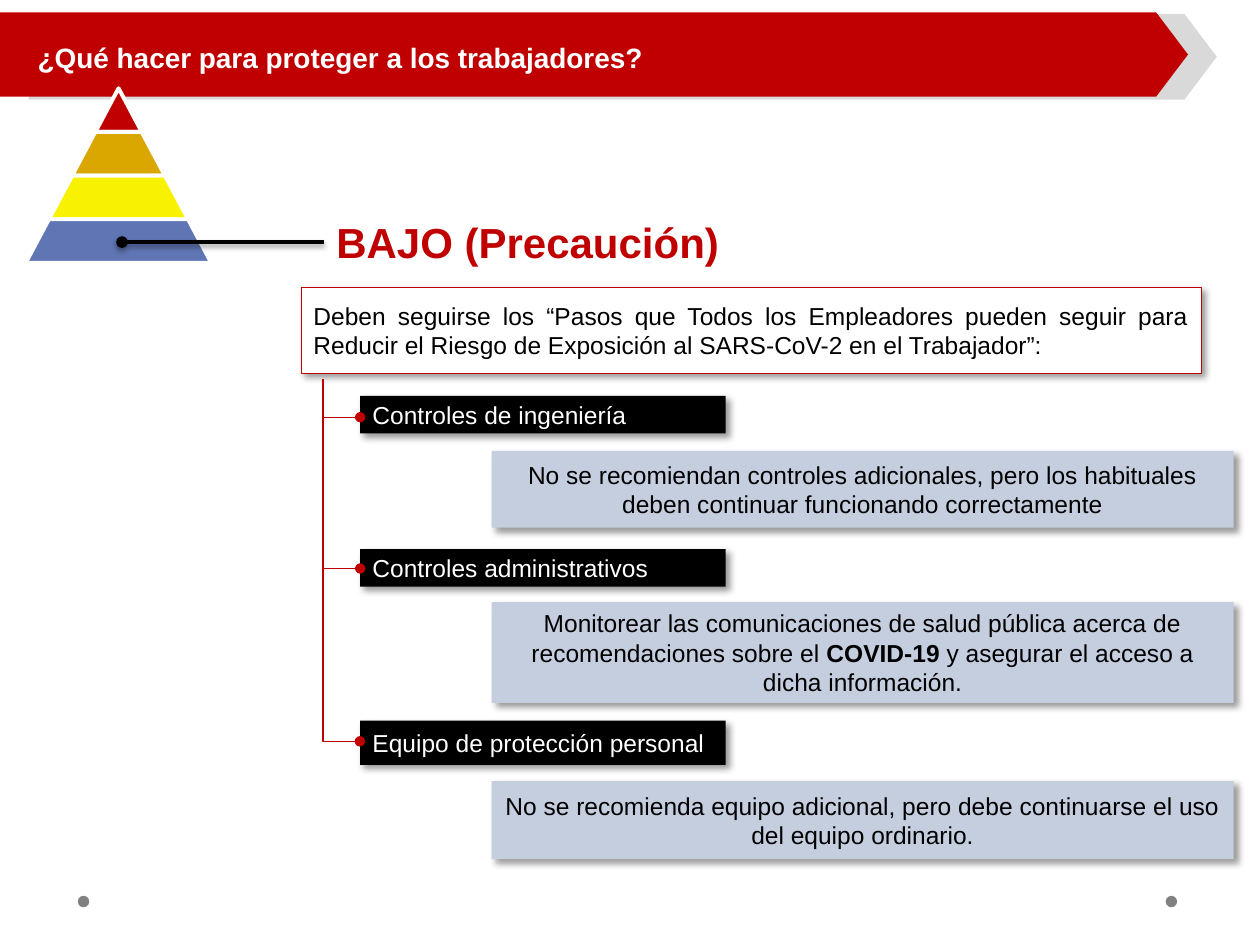
"""Build the slide on protecting workers at the low (caution) risk level."""
import lxml.etree
import pptx
import pptx.dml.color
import pptx.enum.shapes
import pptx.enum.text
import pptx.oxml
import pptx.oxml.ns
import pptx.util

Cm, Pt = pptx.util.Cm, pptx.util.Pt
SHAPE = pptx.enum.shapes.MSO_SHAPE
CONNECTOR = pptx.enum.shapes.MSO_CONNECTOR
ALIGN = pptx.enum.text.PP_ALIGN
ANCHOR = pptx.enum.text.MSO_ANCHOR
RED, BLACK, WHITE = "C00000", "000000", "FFFFFF"


def paint(fill, colour):
    fill.solid()
    fill.fore_color.rgb = pptx.dml.color.RGBColor.from_string(colour)


def write(shape, text, size=14, colour=BLACK, bold=False, align=ALIGN.LEFT, anchor=ANCHOR.MIDDLE):
    frame = shape.text_frame
    frame.word_wrap = True
    frame.vertical_anchor = anchor
    paragraph = frame.paragraphs[0]
    paragraph.alignment = align
    for index, part in enumerate(text.split("**")):
        run = paragraph.add_run()
        run.text = part
        run.font.name = "Arial"
        run.font.size = Pt(size)
        run.font.bold = bold or index % 2 == 1
        paint(run.font.fill, colour)


deck = pptx.Presentation()
deck.slide_width, deck.slide_height = Cm(25.4), Cm(19.05)
slide = deck.slides.add_slide(deck.slide_layouts[6])
shapes = slide.shapes
flat, raised = [], []

for left in (23.5, 1.57):
    dot = shapes.add_shape(SHAPE.OVAL, Cm(left), Cm(18.06), Cm(0.23), Cm(0.23))
    paint(dot.fill, "808080")
    dot.line.fill.background()
    flat.append(dot)

for left, top, height, colour in ((0.58, 0.28, 1.73, "D9D9D9"), (0, 0.25, 1.7, RED)):
    banner = shapes.add_shape(SHAPE.PENTAGON, Cm(left), Cm(top), Cm(23.95), Cm(height))
    banner.adjustments[0] = 0.378
    paint(banner.fill, colour)
    banner.line.fill.background()
    flat.append(banner)

title = shapes.add_textbox(Cm(0.51), Cm(0.69), Cm(22.91), Cm(0.94))
write(title, "¿Qué hacer para proteger a los trabajadores?", size=16, colour=WHITE,
      bold=True, anchor=ANCHOR.TOP)

pyramid = shapes.add_group_shape()
level_height, level_step = 0.88, 0.935
for row, colour in enumerate((RED, "DAA600", "F8F200", "6076B4")):
    width = level_step * (row + 1)
    level = pyramid.shapes.add_shape(SHAPE.TRAPEZOID, Cm(2.39 - width / 2),
                                     Cm(1.78 + row * level_height), Cm(width), Cm(level_height))
    level.adjustments[0] = 0.531
    paint(level.fill, colour)
    paint(level.line.fill, WHITE)
    level.line.width = Pt(2.25)
    flat.append(level)

risk = shapes.add_textbox(Cm(6.53), Cm(3.94), Cm(8.61), Cm(1.85))
write(risk, "BAJO (Precaución)", size=24, colour=RED, bold=True, align=ALIGN.JUSTIFY)

pointer = shapes.add_connector(CONNECTOR.STRAIGHT, Cm(6.53), Cm(4.88), Cm(2.46), Cm(4.88))
paint(pointer.line.fill, BLACK)
pointer.line.width = Pt(2.25)

guidance = shapes.add_shape(SHAPE.RECTANGLE, Cm(6.07), Cm(5.79), Cm(18.14), Cm(1.73))
paint(guidance.fill, WHITE)
paint(guidance.line.fill, RED)
guidance.line.width = Pt(0.25)
write(guidance, "Deben seguirse los “Pasos que Todos los Empleadores pueden seguir para "
      "Reducir el Riesgo de Exposición al SARS-CoV-2 en el Trabajador”:", align=ALIGN.JUSTIFY)
raised.append(guidance)

controls = (
    (7.98, 0.76, "Controles de ingeniería", 9.09, 1.55,
     "No se recomiendan controles adicionales, pero los habituales "
     "deben continuar funcionando correctamente"),
    (11.07, 0.76, "Controles administrativos", 12.14, 2.03,
     "Monitorear las comunicaciones de salud pública acerca de recomendaciones sobre el "
     "**COVID-19** y asegurar el acceso a dicha información."),
    (14.53, 0.89, "Equipo de protección personal", 15.75, 1.57,
     "No se recomienda equipo adicional, pero debe continuarse el uso del equipo ordinario."),
)
for control_top, control_height, control, measure_top, measure_height, measure in controls:
    for left, top, width, height, text, fill, colour, align in (
        (7.26, control_top, 7.37, control_height, control, BLACK, WHITE, ALIGN.JUSTIFY),
        (9.91, measure_top, 14.96, measure_height, measure, "C5CEDF", BLACK, ALIGN.CENTER),
    ):
        box = shapes.add_shape(SHAPE.RECTANGLE, Cm(left), Cm(top), Cm(width), Cm(height))
        paint(box.fill, fill)
        box.line.fill.background()
        write(box, text, colour=colour, align=align)
        raised.append(box)

trunk = shapes.add_connector(CONNECTOR.ELBOW, Cm(10.54), Cm(10.92), Cm(3.23), Cm(11.66))
trunk_frame = trunk._element.spPr
trunk_frame.find(pptx.oxml.ns.qn("a:xfrm")).set("rot", "16200000")
trunk_frame.find(pptx.oxml.ns.qn("a:prstGeom")).set("prst", "bentConnector2")
branches = [trunk]
for height in (8.41, 11.46):
    branches.append(shapes.add_connector(CONNECTOR.STRAIGHT, Cm(6.53), Cm(height),
                                         Cm(7.26), Cm(height)))
for branch in branches:
    paint(branch.line.fill, RED)
    branch.line.width = Pt(0.75)
flat += branches

for link in [pointer] + branches:
    outline = link._element.spPr.find(pptx.oxml.ns.qn("a:ln"))
    lxml.etree.SubElement(outline, pptx.oxml.ns.qn("a:tailEnd"), type="oval")

for members, shadow in ((flat, None), (raised, (40, 4, 3, 45)), ([pointer], (38, 3.1, 1.6, 90))):
    for member in members:
        effects = lxml.etree.SubElement(member._element.spPr, pptx.oxml.ns.qn("a:effectLst"))
        if shadow:
            opacity, blur, distance, angle = shadow
            cast = lxml.etree.SubElement(
                effects, pptx.oxml.ns.qn("a:outerShdw"), blurRad=str(Pt(blur)),
                dist=str(Pt(distance)), dir=str(angle * 60000), algn="tl", rotWithShape="0")
            tint = lxml.etree.SubElement(cast, pptx.oxml.ns.qn("a:srgbClr"), val=BLACK)
            lxml.etree.SubElement(tint, pptx.oxml.ns.qn("a:alpha"), val=str(opacity * 1000))

deck.save("out.pptx")
